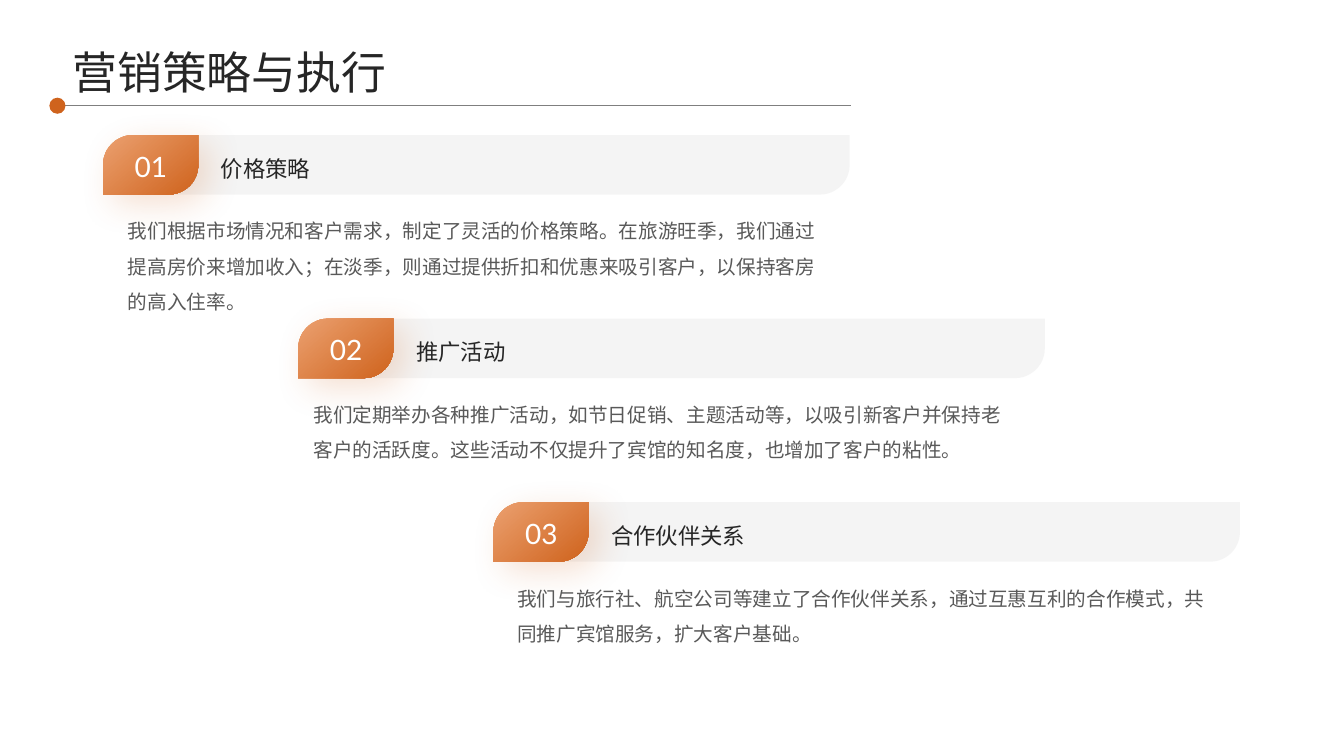
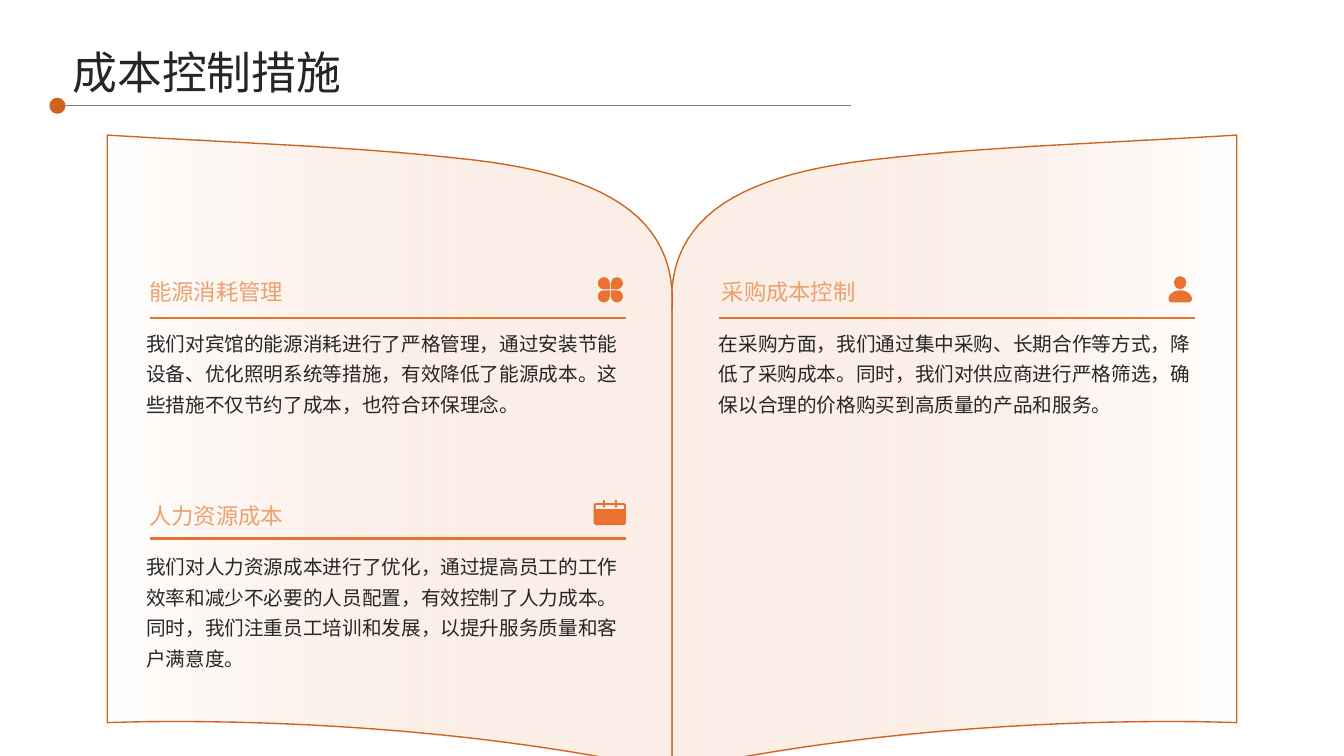
from dataclasses import dataclass
from itertools import product

from lxml.etree import SubElement
from pptx import Presentation
from pptx.dml.color import RGBColor
from pptx.dml.fill import FillFormat
from pptx.enum.shapes import MSO_CONNECTOR, MSO_SHAPE
from pptx.enum.text import MSO_ANCHOR as Anchor, PP_ALIGN as Align
from pptx.oxml.ns import qn
from pptx.shapes.autoshape import Shape
from pptx.slide import Slide
from pptx.util import Pt

Point = tuple[float, float]
Contour = list[Point]


@dataclass(frozen=True)
class Theme:
    cjk_font: str = "Noto Sans CJK SC"
    number_font: str = "Lato"
    accent: str = "CF631D"
    accent_light: str = "EBA06F"
    icon: str = "E97132"
    page_tint: str = "F8DFCF"
    white: str = "FFFFFF"
    bar: str = "F2F2F2"
    ink: str = "262626"
    muted: str = "595959"
    title_rule: str = "7F7F7F"
    title_size: float = 32
    number_size: float = 20
    heading_size: float = 16
    body_size: float = 14


THEME = Theme()


@dataclass(frozen=True)
class Box:
    left: float
    top: float
    width: float
    height: float

    def lengths(self) -> tuple[Pt, Pt, Pt, Pt]:
        return Pt(self.left), Pt(self.top), Pt(self.width), Pt(self.height)


@dataclass(frozen=True)
class TextStyle:
    size: float
    color: str
    spacing: float
    font: str = THEME.cjk_font
    anchor: Anchor = Anchor.MIDDLE
    align: Align = Align.LEFT


@dataclass(frozen=True)
class Strategy:
    heading: str
    body: str
    body_left: float


@dataclass(frozen=True)
class Measure:
    heading: str
    body: str
    left: float
    top: float
    rule_left: float
    rule_y: float


TITLE = TextStyle(THEME.title_size, THEME.ink, 1.1)
NUMBER = TextStyle(THEME.number_size, THEME.white, 1.1, THEME.number_font, align=Align.CENTER)
STRATEGY_HEADING = TextStyle(THEME.heading_size, THEME.ink, 1.3)
STRATEGY_BODY = TextStyle(THEME.body_size, THEME.muted, 1.5, anchor=Anchor.TOP)
MEASURE_HEADING = TextStyle(THEME.heading_size, THEME.accent_light, 1.1, anchor=Anchor.BOTTOM)
MEASURE_BODY = TextStyle(THEME.body_size, THEME.ink, 1.3, anchor=Anchor.TOP)

STRATEGIES = [
    Strategy("价格策略", "我们根据市场情况和客户需求，制定了灵活的价格策略。在旅游旺季，我们通过提高房价来增加收入；在淡季，则通过提供折扣和优惠来吸引客户，以保持客房的高入住率。", 91.4),
    Strategy("推广活动", "我们定期举办各种推广活动，如节日促销、主题活动等，以吸引新客户并保持老客户的活跃度。这些活动不仅提升了宾馆的知名度，也增加了客户的粘性。", 223.9),
    Strategy("合作伙伴关系", "我们与旅行社、航空公司等建立了合作伙伴关系，通过互惠互利的合作模式，共同推广宾馆服务，扩大客户基础。", 369.4),
]

MEASURES = [
    Measure("能源消耗管理", "我们对宾馆的能源消耗进行了严格管理，通过安装节能设备、优化照明系统等措施，有效降低了能源成本。这些措施不仅节约了成本，也符合环保理念。", 104.4, 175.7, 107.3, 227.2),
    Measure("人力资源成本", "我们对人力资源成本进行了优化，通过提高员工的工作效率和减少不必要的人员配置，有效控制了人力成本。同时，我们注重员工培训和发展，以提升服务质量和客户满意度。", 104.4, 335.5, 107.3, 384.6),
    Measure("采购成本控制", "在采购方面，我们通过集中采购、长期合作等方式，降低了采购成本。同时，我们对供应商进行严格筛选，确保以合理的价格购买到高质量的产品和服务。", 513.4, 175.7, 513.4, 227.2),
]


def rgb(color: str) -> RGBColor:
    return RGBColor.from_string(color)


def set_gradient(fill: FillFormat, stops: list[tuple[str, float]], clockwise: float) -> None:
    fill.gradient()
    fill.gradient_angle = (360 - clockwise) % 360
    for stop, (color, position) in zip(fill.gradient_stops, stops):
        stop.color.rgb = rgb(color)
        stop.position = position


def set_alpha(shape: Shape, color: str, percent: float) -> None:
    for element in shape.element.spPr.iter(qn("a:srgbClr")):
        if element.get("val") == color:
            SubElement(element, qn("a:alpha"), val=str(int(percent * 1000)))


def paint(shape: Shape, color: str) -> Shape:
    shape.shadow.inherit = False
    shape.fill.solid()
    shape.fill.fore_color.rgb = rgb(color)
    shape.line.fill.background()
    return shape


def add_preset(slide: Slide, kind: MSO_SHAPE, box: Box, color: str) -> Shape:
    return paint(slide.shapes.add_shape(kind, *box.lengths()), color)


def add_rule(slide: Slide, left: float, right: float, y: float, color: str, weight: float) -> None:
    rule = slide.shapes.add_connector(MSO_CONNECTOR.STRAIGHT, Pt(left), Pt(y), Pt(right), Pt(y))
    rule.line.color.rgb = rgb(color)
    rule.line.width = Pt(weight)
    SubElement(rule.element.spPr, qn("a:effectLst"))


def add_text(slide: Slide, box: Box, text: str, style: TextStyle) -> Shape:
    label = slide.shapes.add_textbox(*box.lengths())
    frame = label.text_frame
    frame.word_wrap = True
    frame.vertical_anchor = style.anchor
    frame.margin_left = frame.margin_right = frame.margin_top = frame.margin_bottom = 0
    frame.text = text
    paragraph = frame.paragraphs[0]
    paragraph.alignment = style.align
    paragraph.line_spacing = style.spacing
    font = paragraph.runs[0].font
    font.size = Pt(style.size)
    font.color.rgb = rgb(style.color)
    font.name = style.font
    SubElement(paragraph.runs[0].font._element, qn("a:ea"), typeface=style.font)
    return label


def curve(start: Point, first: Point, second: Point, end: Point, steps: int = 24) -> Contour:
    points = []
    for step in range(1, steps + 1):
        t = step / steps
        weights = ((1 - t) ** 3, 3 * t * (1 - t) ** 2, 3 * t * t * (1 - t), t ** 3)
        corners = (start, first, second, end)
        points.append((
            sum(w * x for w, (x, _) in zip(weights, corners)),
            sum(w * y for w, (_, y) in zip(weights, corners)),
        ))
    return points


def mirror(contour: Contour, axis: float) -> Contour:
    return [(2 * axis - x, y) for x, y in contour]


def clipped_box(box: Box, cut: float) -> Contour:
    left, top = box.left, box.top
    right, bottom = left + box.width, top + box.height
    return [
        (left + cut, top), (right - cut, top), (right, top + cut), (right, bottom - cut),
        (right - cut, bottom), (left + cut, bottom), (left, bottom - cut), (left, top + cut),
    ]


def add_outline(slide: Slide, contours: list[Contour], color: str) -> Shape:
    scaled = [[(Pt(x), Pt(y)) for x, y in contour] for contour in contours]
    builder = slide.shapes.build_freeform(*scaled[0][0], scale=1.0)
    for index, contour in enumerate(scaled):
        if index:
            builder.move_to(*contour[0])
        builder.add_line_segments(contour[1:], close=True)
    return paint(builder.convert_to_shape(), color)


def add_title(slide: Slide, text: str) -> None:
    add_text(slide, Box(51.8, 31, 855.4, 36.7), text, TITLE)
    add_rule(slide, 40.3, 607.7, 75.6, THEME.title_rule, 0.75)
    add_preset(slide, MSO_SHAPE.OVAL, Box(35.3, 69.8, 11.5, 11.5), THEME.accent)


def add_badge_shadow(badge: Shape) -> None:
    effects = badge.element.spPr.find(qn("a:effectLst"))
    shadow = SubElement(
        effects, qn("a:outerShdw"), blurRad=str(Pt(25)), dist=str(Pt(10)),
        dir=str(40 * 60000), algn="tl", rotWithShape="0",
    )
    tone = SubElement(shadow, qn("a:srgbClr"), val=THEME.accent)
    SubElement(tone, qn("a:alpha"), val="20000")


def add_strategy(slide: Slide, index: int, strategy: Strategy) -> None:
    left, top = 73.6 + 139.4 * index, 96.5 + 131.1 * index
    bar = add_preset(slide, MSO_SHAPE.ROUND_2_DIAG_RECTANGLE, Box(left + 22.8, top, 510.5, 42.5), THEME.bar)
    set_alpha(bar, THEME.bar, 80)
    badge = add_preset(slide, MSO_SHAPE.ROUND_2_DIAG_RECTANGLE, Box(left, top, 68, 42.5), THEME.accent)
    set_gradient(badge.fill, [(THEME.accent_light, 0.01), (THEME.accent, 1)], 50)
    add_badge_shadow(badge)
    for panel in (bar, badge):
        panel.adjustments[0] = 0.5
        panel.adjustments[1] = 0
    add_text(slide, Box(strategy.body_left, top + 51.8, 496, 65.5), strategy.body, STRATEGY_BODY)
    add_text(slide, Box(left + 84.2, top + 6.8, 425.5, 28), strategy.heading, STRATEGY_HEADING)
    add_text(slide, Box(left + 13, top + 6.8, 42.5, 28), f"{index + 1:02d}", NUMBER)


def add_book(slide: Slide) -> None:
    spine = 480
    gutter, shoulder, corner = (spine, 223.2), (633.4, 113), (883.4, 96.5)
    foot, base = (883.4, 516.2), (spine, 550.8)
    right_page = [
        base, gutter,
        *curve(gutter, (475, 152.6), (532, 123.1), shoulder),
        *curve(shoulder, (711.8, 104.4), (791.8, 102.2), corner),
        foot,
        *curve(foot, foot, (677.3, 506.9), base),
    ]
    for outline, direction in ((right_page, 180), (mirror(right_page, spine), 0)):
        page = add_outline(slide, [outline], THEME.page_tint)
        set_gradient(page.fill, [(THEME.white, 0), (THEME.page_tint, 0.69)], direction)
        set_alpha(page, THEME.page_tint, 50)
        page.line.color.rgb = rgb(THEME.accent)
        page.line.width = Pt(0.95)


def add_measure(slide: Slide, measure: Measure) -> None:
    heading = add_text(slide, Box(measure.left + 2.1, measure.top, 212.4, 42.5), measure.heading, MEASURE_HEADING)
    heading_font = heading.text_frame.paragraphs[0].runs[0].font
    set_gradient(heading_font.fill, [(THEME.accent_light, 0), (THEME.accent, 0.69)], 225)
    add_rule(slide, measure.rule_left, measure.rule_left + 340, measure.rule_y, THEME.icon, 1.75)
    add_text(slide, Box(measure.left, measure.top + 56.1, 344.9, 79.2), measure.body, MEASURE_BODY)


def add_clover(slide: Slide) -> None:
    turns = (90, 0, 180, 270)
    for (column, row), turn in zip(product(range(2), repeat=2), turns):
        box = Box(427 + 9.4 * column, 198 + 9.4 * row, 8.6, 8.6)
        add_preset(slide, MSO_SHAPE.TEAR, box, THEME.icon).rotation = turn


def add_person(slide: Slide) -> None:
    axis = 843
    neck, elbow, hem = (axis, 207.4), (851.2, 212.4), (848.9, 216)
    half = [neck, *curve(neck, (848, 207.4), (850.5, 210.3), elbow),
            *curve(elbow, (851.8, 214.6), (850.4, 216), hem)]
    add_outline(slide, [half + mirror(half, axis)[::-1]], THEME.icon)
    add_preset(slide, MSO_SHAPE.OVAL, Box(axis - 4.4, 197.3, 8.8, 9.2), THEME.icon)


def add_calendar(slide: Slide) -> None:
    sheet = clipped_box(Box(424.1, 359.3, 23, 15.8), 1.2)
    header = clipped_box(Box(425.5, 360.7, 20.2, 2.9), 0.5)
    add_outline(slide, [sheet, header[::-1]], THEME.icon)
    for ring_left in (430.6, 439.2):
        ring = add_preset(slide, MSO_SHAPE.ROUNDED_RECTANGLE, Box(ring_left, 357.1, 1.4, 5.5), THEME.icon)
        ring.adjustments[0] = 0.5


def main() -> None:
    deck = Presentation()
    deck.slide_width, deck.slide_height = Pt(960), Pt(540)
    blank = deck.slide_layouts[6]

    marketing = deck.slides.add_slide(blank)
    for index, strategy in enumerate(STRATEGIES):
        add_strategy(marketing, index, strategy)
    add_title(marketing, "营销策略与执行")

    costs = deck.slides.add_slide(blank)
    add_book(costs)
    for measure in MEASURES:
        add_measure(costs, measure)
    add_clover(costs)
    add_person(costs)
    add_calendar(costs)
    add_title(costs, "成本控制措施")

    deck.save("out.pptx")


if __name__ == "__main__":
    main()
